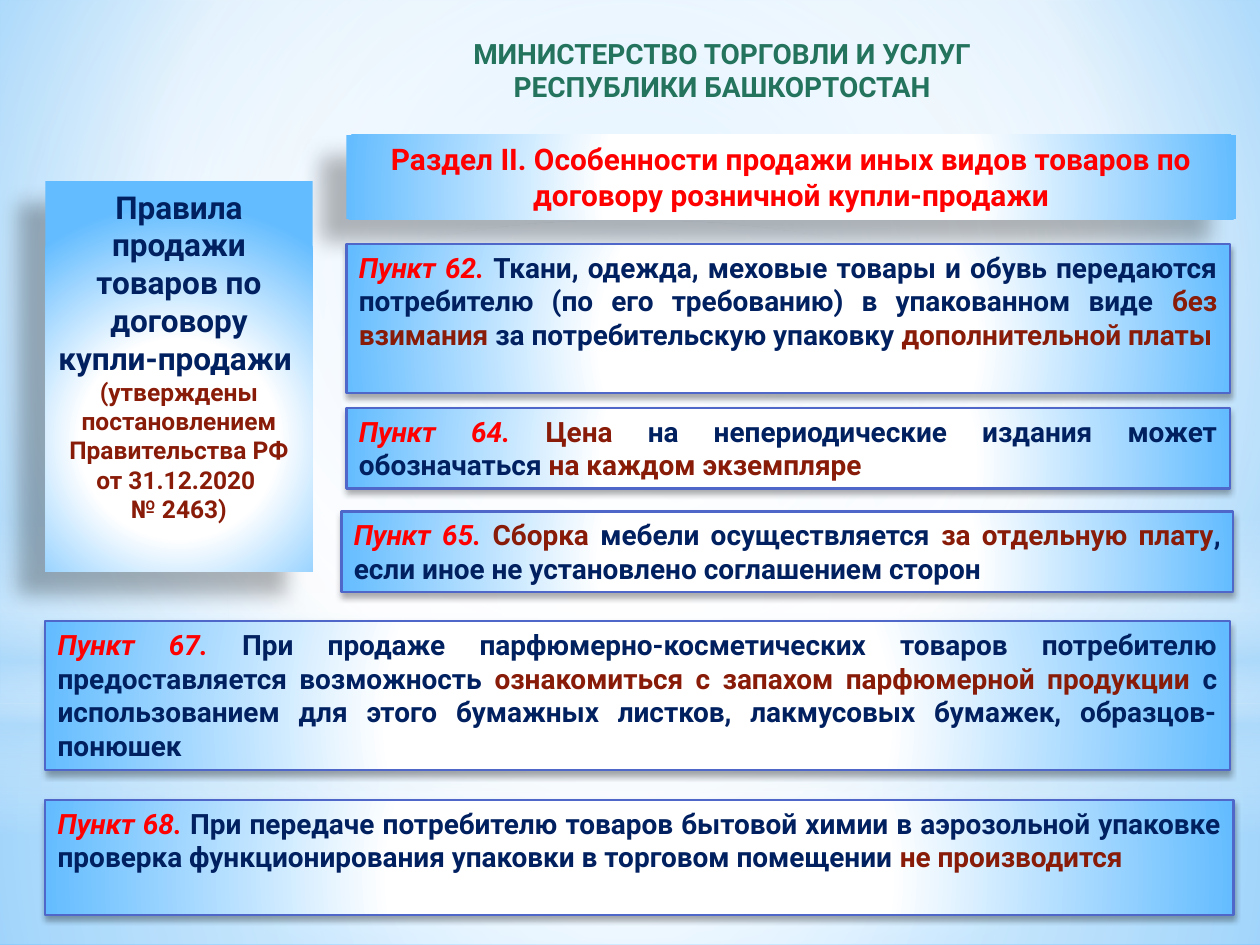
from dataclasses import dataclass
from typing import NamedTuple, Optional

from lxml.etree import SubElement
from pptx import Presentation
from pptx.dml.color import RGBColor
from pptx.enum.shapes import MSO_SHAPE as Preset
from pptx.enum.text import MSO_ANCHOR as Anchor, MSO_AUTO_SIZE as AutoSize, PP_ALIGN as Align
from pptx.oxml.ns import qn
from pptx.util import Pt

COLOURS = {
    "white": "FFFFFF", "sky": "9ED5FF", "azure": "5BB9FF", "mist": "B4DCFA",
    "panel": "63BCFF", "border": "4E67C8", "black": "000000",
    "green": "23735D", "red": "FF0000", "navy": "002060", "brown": "891B09",
}
FONT = "Roboto"


class Stop(NamedTuple):
    position: int
    colour: str
    alpha: int = 100


class Gradient(NamedTuple):
    stops: tuple
    focus: Optional[tuple] = (50, 50, 50, 50)
    angle: int = 0


class Shadow(NamedTuple):
    alpha: int
    blur: float
    distance: float
    direction: int


class Words(NamedTuple):
    text: str
    colour: str
    size: int = 16
    italic: bool = False


class Box(NamedTuple):
    left: float
    top: float
    width: float
    height: float


@dataclass
class Panel:
    box: Box
    paragraphs: list
    shadow: Shadow
    align: Align = Align.CENTER
    bordered: bool = False


BACKGROUND = Gradient((Stop(0, "sky"), Stop(60, "white"), Stop(100, "azure")), (20, 10, 20, 60))
PANEL_FILL = Gradient((Stop(0, "white"), Stop(42, "white"), Stop(100, "panel")), (24, 44, 24, 12))
DEEP = Shadow(28, 11.8, 19.7, 141)
SOFT = Shadow(32, 3.5, 2.2, 90)

BACKDROP = [
    (Preset.RECTANGLE, Box(0, 402, 720, 138),
     Gradient((Stop(0, "white", 91), Stop(37, "white", 76), Stop(100, "mist", 79)))),
    (Preset.RECTANGLE, Box(0, 0, 720, 402),
     Gradient((Stop(0, "white", 89), Stop(48, "white", 62), Stop(100, "mist", 79)))),
    (Preset.RECTANGLE, Box(0, 296.6, 720, 180),
     Gradient((Stop(0, "white", 0), Stop(29, "white", 30), Stop(45, "mist", 40),
               Stop(55, "white", 26), Stop(65, "mist", 60), Stop(100, "white", 0)), None, 90)),
    (Preset.OVAL, Box(0, 126, 720, 402),
     Gradient((Stop(0, "white"), Stop(56, "white", 0)))),
]

MINISTRY = [
    [Words("МИНИСТЕРСТВО ТОРГОВЛИ И УСЛУГ ", "green")],
    [Words("РЕСПУБЛИКИ БАШКОРТОСТАН ", "green")],
]
SECTION = [[Words("Раздел II. Особенности продажи иных видов товаров по "
                  "договору розничной купли-продажи", "red", 17)]]
RULES = [
    [Words("Правила продажи товаров по договору купли-продажи ", "navy", 18)],
    [Words("(утверждены постановлением Правительства РФ от 31.12.2020 ", "brown", 14)],
    [Words("№ 2463)", "brown", 14)],
]


def clause(number: int, box: Box, *words: Words) -> Panel:
    """Return a bordered panel that opens with its clause number."""
    heading = Words(f"Пункт {number}. ", "red", italic=True)
    return Panel(box, [[heading, *words]], SOFT, Align.JUSTIFY, True)


PANELS = [
    Panel(Box(198, 77, 508.3, 48.4), SECTION, DEEP),
    Panel(Box(25.9, 103.7, 152.8, 223.2), RULES, DEEP),
    clause(62, Box(198, 139.5, 504.7, 85),
           Words("Ткани, одежда, меховые товары и обувь передаются потребителю "
                 "(по его требованию) в упакованном виде ", "navy"),
           Words("без взимания", "brown"),
           Words(" за потребительскую упаковку ", "navy"),
           Words("дополнительной платы", "brown")),
    clause(65, Box(195.1, 292.3, 509.4, 46.1),
           Words("Сборка ", "brown"),
           Words("мебели осуществляется ", "navy"),
           Words("за отдельную плату", "brown"),
           Words(", если иное не установлено соглашением сторон", "navy")),
    clause(64, Box(198, 233.1, 504.7, 46.1),
           Words("Цена", "brown"),
           Words(" на непериодические издания может обозначаться ", "navy"),
           Words("на каждом экземпляре", "brown")),
    clause(67, Box(25.9, 355, 676.8, 85),
           Words("При продаже парфюмерно-косметических товаров потребителю "
                 "предоставляется возможность ", "navy"),
           Words("ознакомиться с запахом парфюмерной продукции", "brown"),
           Words(" с использованием для этого бумажных листков, лакмусовых бумажек, "
                 "образцов-понюшек", "navy")),
    clause(68, Box(25.9, 457.2, 679, 65.5),
           Words("При передаче потребителю товаров бытовой химии в аэрозольной упаковке "
                 "проверка функционирования упаковки в торговом помещении ", "navy"),
           Words("не производится", "brown")),
]


def add_colour(parent, colour: str, alpha: int) -> None:
    """Add a colour with its opacity in percent."""
    tint = SubElement(parent, qn("a:srgbClr"), val=COLOURS[colour])
    if alpha < 100:
        SubElement(tint, qn("a:alpha"), val=str(alpha * 1000))


def apply_gradient(properties, gradient: Gradient) -> None:
    """Replace the solid fill of the properties with a gradient."""
    solid = properties.find(qn("a:solidFill"))
    fill = SubElement(properties, qn("a:gradFill"), rotWithShape="1")
    properties.replace(solid, fill)
    stops = SubElement(fill, qn("a:gsLst"))
    for stop in gradient.stops:
        mark = SubElement(stops, qn("a:gs"), pos=str(stop.position * 1000))
        add_colour(mark, stop.colour, stop.alpha)
    if gradient.focus:
        circle = SubElement(fill, qn("a:path"), path="circle")
        edges = {side: str(share * 1000) for side, share in zip("ltrb", gradient.focus)}
        SubElement(circle, qn("a:fillToRect"), **edges)
    else:
        SubElement(fill, qn("a:lin"), ang=str(gradient.angle * 60000), scaled="0")


def draw_shape(slide, preset: Preset, box: Box, gradient: Gradient):
    """Draw a borderless gradient shape and return it."""
    shape = slide.shapes.add_shape(preset, *map(Pt, box))
    shape.shadow.inherit = False
    shape.line.fill.background()
    shape.fill.solid()
    apply_gradient(shape.element.spPr, gradient)
    return shape


def cast_shadow(shape, shadow: Shadow) -> None:
    """Give the shape an outer shadow."""
    effects = shape.element.spPr.find(qn("a:effectLst"))
    outer = SubElement(effects, qn("a:outerShdw"), blurRad=str(Pt(shadow.blur)),
                       dist=str(Pt(shadow.distance)), dir=str(shadow.direction * 60000),
                       algn="ctr", rotWithShape="0")
    add_colour(outer, "black", shadow.alpha)


def write(frame, paragraphs: list, align: Align) -> None:
    """Fill a text frame run by run."""
    frame.word_wrap = True
    frame.auto_size = AutoSize.NONE
    frame.vertical_anchor = Anchor.TOP
    for index, runs in enumerate(paragraphs):
        paragraph = frame.add_paragraph() if index else frame.paragraphs[0]
        paragraph.alignment = align
        for words in runs:
            run = paragraph.add_run()
            run.text = words.text
            run.font.name = FONT
            run.font.size = Pt(words.size)
            run.font.bold = True
            run.font.italic = words.italic
            run.font.color.rgb = RGBColor.from_string(COLOURS[words.colour])


def draw_panel(slide, panel: Panel) -> None:
    """Draw a text panel with its shadow and optional border."""
    shape = draw_shape(slide, Preset.RECTANGLE, panel.box, PANEL_FILL)
    cast_shadow(shape, panel.shadow)
    if panel.bordered:
        shape.line.color.rgb = RGBColor.from_string(COLOURS["border"])
        shape.line.width = Pt(1.25)
    write(shape.text_frame, panel.paragraphs, panel.align)


def main() -> None:
    """Build the slide and save it."""
    deck = Presentation()
    deck.slide_width, deck.slide_height = Pt(720), Pt(540)
    slide = deck.slides.add_slide(deck.slide_layouts[6])
    slide.background.fill.solid()
    apply_gradient(slide.element.find(".//" + qn("p:bgPr")), BACKGROUND)
    for preset, box, gradient in BACKDROP:
        draw_shape(slide, preset, box, gradient)
    ministry = slide.shapes.add_textbox(*map(Pt, Box(133.2, 17.3, 563, 46.1)))
    write(ministry.text_frame, MINISTRY, Align.CENTER)
    for panel in PANELS:
        draw_panel(slide, panel)
    deck.save("out.pptx")


if __name__ == "__main__":
    main()
